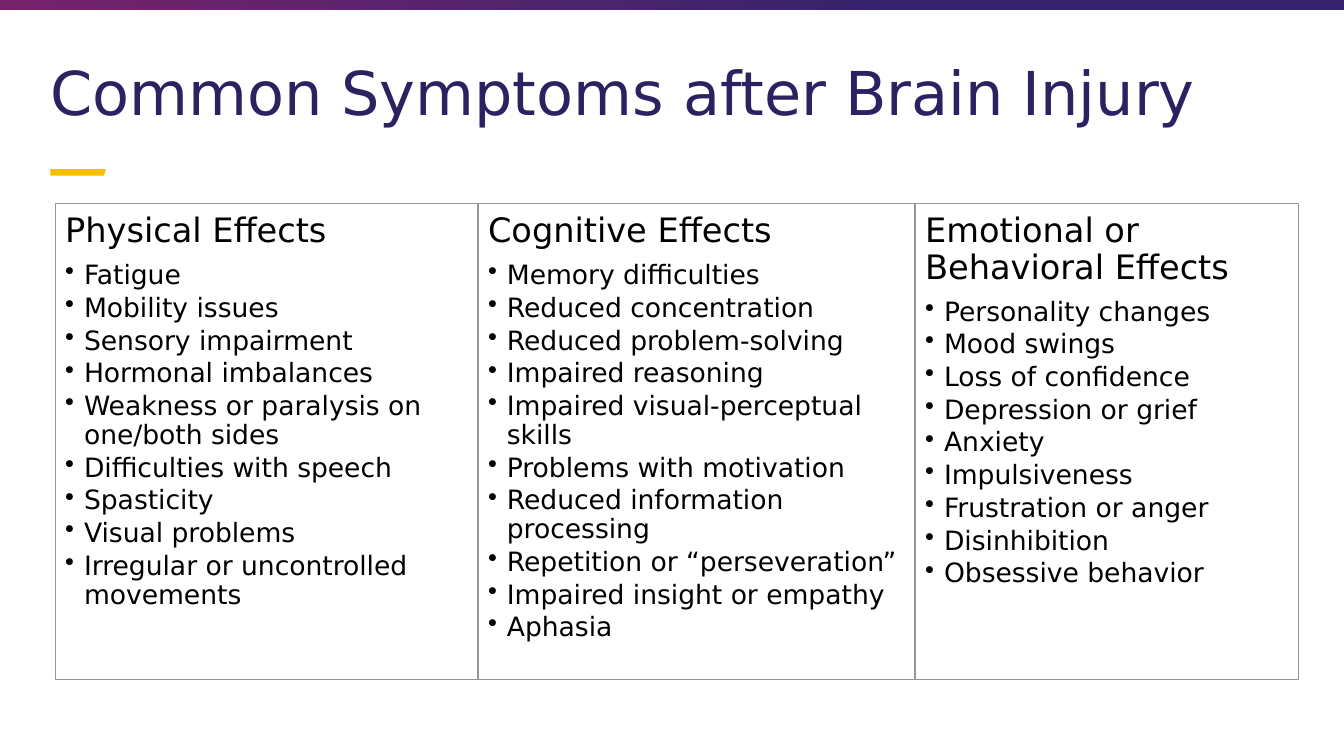
from dataclasses import dataclass

from lxml.etree import SubElement
from pptx import Presentation
from pptx.dml.color import RGBColor
from pptx.enum.shapes import MSO_SHAPE as Preset
from pptx.enum.text import MSO_ANCHOR as Anchor, PP_ALIGN as Align
from pptx.oxml.ns import qn
from pptx.util import Pt


@dataclass(frozen=True)
class Theme:
    font: str = "DejaVu Sans"
    title: str = "2E2161"
    text: str = "000000"
    panel: str = "FFFFFF"
    border: str = "969696"
    accent: str = "F5C001"
    bar_start: str = "77236C"
    bar_end: str = "35246C"
    title_size: float = 43.2
    heading_size: float = 24
    bullet_size: float = 19


THEME = Theme()
SLIDE_WIDTH, SLIDE_HEIGHT = 960, 540
PANEL_TOP, PANEL_HEIGHT = 145.5, 340
PANEL_EDGES = [39.5, 341.5, 653.75, 927.5]
BULLET_INDENT = 13.5

EFFECTS = [
    ("Physical Effects", [
        "Fatigue",
        "Mobility issues",
        "Sensory impairment",
        "Hormonal imbalances",
        "Weakness or paralysis on one/both sides",
        "Difficulties with speech",
        "Spasticity",
        "Visual problems",
        "Irregular or uncontrolled movements",
    ]),
    ("Cognitive Effects", [
        "Memory difficulties",
        "Reduced concentration",
        "Reduced problem-solving",
        "Impaired reasoning",
        "Impaired visual-perceptual skills",
        "Problems with motivation",
        "Reduced information processing",
        "Repetition or “perseveration”",
        "Impaired insight or empathy",
        "Aphasia",
    ]),
    ("Emotional or Behavioral Effects", [
        "Personality changes",
        "Mood swings",
        "Loss of confidence",
        "Depression or grief",
        "Anxiety",
        "Impulsiveness",
        "Frustration or anger",
        "Disinhibition",
        "Obsessive behavior",
    ]),
]


def color(code):
    return RGBColor.from_string(code)


def add_bullet(para):
    properties = para._p.get_or_add_pPr()
    properties.set("marL", str(Pt(BULLET_INDENT)))
    properties.set("indent", str(-Pt(BULLET_INDENT)))
    SubElement(properties, qn("a:buChar")).set("char", "•")


def write(para, text, size, ink=THEME.text, after=0, bullet=False):
    if bullet:
        add_bullet(para)
    para.alignment = Align.LEFT
    para.line_spacing = 0.9
    para.space_after = Pt(after)
    span = para.add_run()
    span.text = text
    span.font.name = THEME.font
    span.font.size = Pt(size)
    span.font.color.rgb = color(ink)


def set_frame(frame, side, top):
    frame.word_wrap = True
    frame.vertical_anchor = Anchor.TOP
    frame.margin_left = frame.margin_right = Pt(side)
    frame.margin_top = frame.margin_bottom = Pt(top)


def add_title(page, text):
    box = page.shapes.add_textbox(Pt(28.8), Pt(41.75), Pt(898.5), Pt(68.4))
    set_frame(box.text_frame, 7.2, 3.6)
    write(box.text_frame.paragraphs[0], text, THEME.title_size, ink=THEME.title)


def add_top_bar(page):
    bar = page.shapes.add_shape(Preset.RECTANGLE, 0, 0, Pt(SLIDE_WIDTH), Pt(7.2))
    bar.shadow.inherit = False
    bar.line.fill.background()
    bar.fill.gradient()
    bar.fill.gradient_angle = 0
    stops = [(0, THEME.bar_start), (0.67, THEME.bar_end)]
    for stop, (position, code) in zip(bar.fill.gradient_stops, stops):
        stop.position = position
        stop.color.rgb = color(code)


def add_accent(page):
    left, top, right, bottom = 36, 120.75, 75.6, 125.5
    builder = page.shapes.build_freeform(Pt(left), Pt(top))
    corners = [(right, top), (right - 1.25, bottom), (left, bottom)]
    builder.add_line_segments([(Pt(x), Pt(y)) for x, y in corners], close=True)
    accent = builder.convert_to_shape()
    accent.shadow.inherit = False
    accent.fill.solid()
    accent.fill.fore_color.rgb = color(THEME.accent)
    accent.line.fill.background()


def add_panel(page, left, right, heading, symptoms):
    panel = page.shapes.add_shape(
        Preset.RECTANGLE, Pt(left), Pt(PANEL_TOP), Pt(right - left), Pt(PANEL_HEIGHT))
    panel.shadow.inherit = False
    panel.fill.solid()
    panel.fill.fore_color.rgb = color(THEME.panel)
    panel.line.color.rgb = color(THEME.border)
    panel.line.width = Pt(1)
    frame = panel.text_frame
    set_frame(frame, 7.2, 7.2)
    write(frame.paragraphs[0], heading, THEME.heading_size, after=8.4)
    for symptom in symptoms:
        write(frame.add_paragraph(), symptom, THEME.bullet_size, after=2.85, bullet=True)


def main():
    deck = Presentation()
    deck.slide_width, deck.slide_height = Pt(SLIDE_WIDTH), Pt(SLIDE_HEIGHT)
    page = deck.slides.add_slide(deck.slide_layouts[6])
    add_top_bar(page)
    add_accent(page)
    add_title(page, "Common Symptoms after Brain Injury")
    for left, right, (heading, symptoms) in zip(PANEL_EDGES, PANEL_EDGES[1:], EFFECTS):
        add_panel(page, left, right, heading, symptoms)
    deck.save("out.pptx")


if __name__ == "__main__":
    main()
